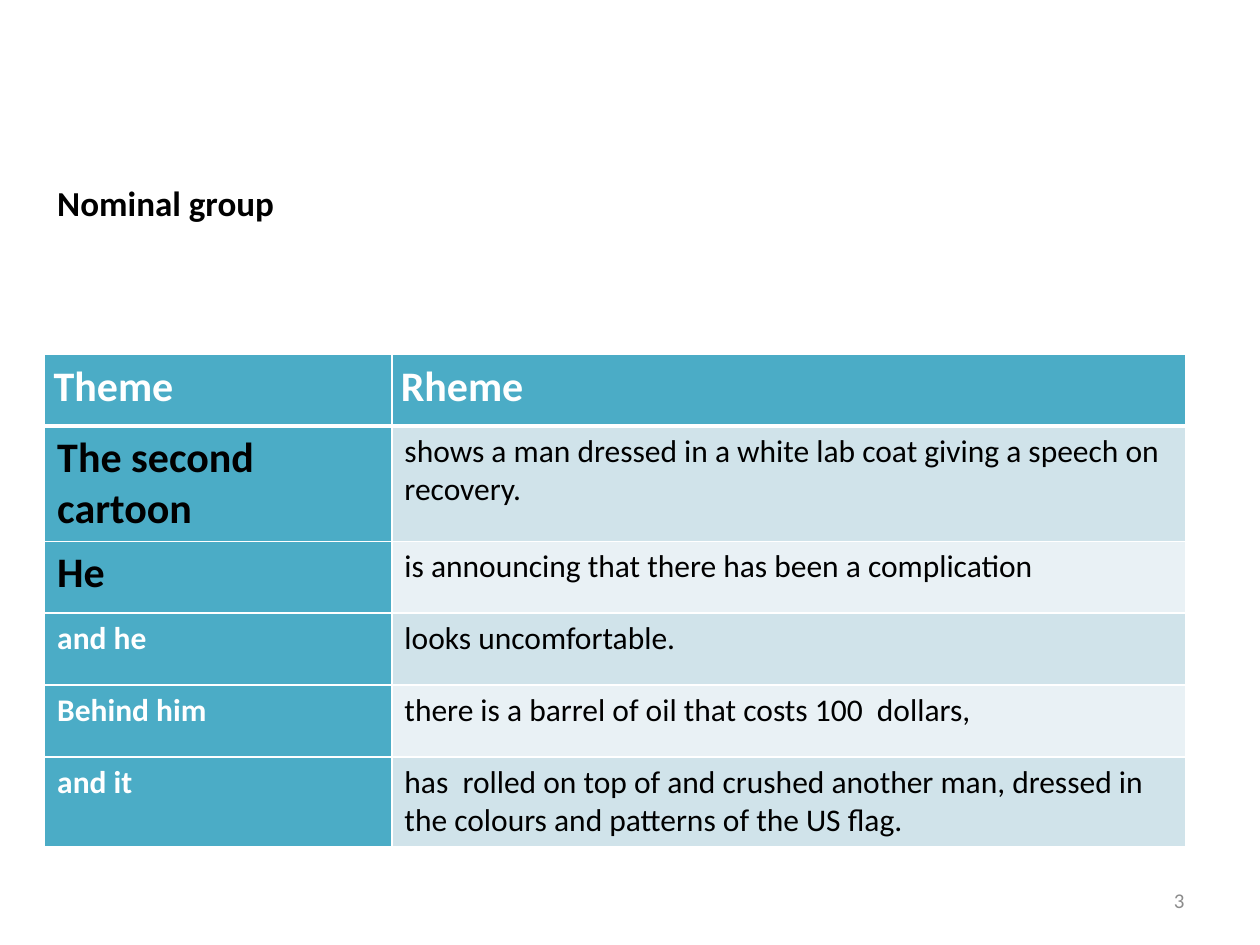
import pptx
import pptx.dml.color
import pptx.enum.text
import pptx.oxml
import pptx.util
from pptx.util import Cm

# Content
TITLE = "Nominal group"
PAGE_NUMBER = "3"
HEADER = ("Theme", "Rheme")
CLAUSES = [  # theme, rheme, whether the theme is a highlighted nominal group
    ("The second cartoon",
     "shows a man dressed in a white lab coat giving a speech on recovery.", True),
    ("He", "is announcing that there has been a complication", True),
    ("and he", "looks uncomfortable.", False),
    ("Behind him", "there is a barrel of oil that costs 100  dollars,", False),
    ("and it",
     "has  rolled on top of and crushed another man, dressed in the colours "
     "and patterns of the US flag.", False),
]

COLORS = {
    "accent": "4BACC6",
    "band_dark": "D0E3EA",
    "band_light": "E9F1F5",
    "white": "FFFFFF",
    "black": "000000",
    "grey": "8C8C8C",
}
FONT = "Calibri"
LEFT = Cm(0.9)
COLUMN_WIDTHS = (Cm(7.0), Cm(16.0))
ROW_HEIGHT = Cm(1.45)
ALIGN = pptx.enum.text.PP_ALIGN
ANCHOR = pptx.enum.text.MSO_ANCHOR


def rgb(name):
    return pptx.dml.color.RGBColor.from_string(COLORS[name])


def write(frame, text, size, color, bold=False, align=ALIGN.LEFT):
    frame.text = text
    para = frame.paragraphs[0]
    para.alignment = align
    for span in para.runs:
        span.font.name = FONT
        span.font.size = pptx.util.Pt(size)
        span.font.bold = bold
        span.font.color.rgb = rgb(color)
    return para


def add_borders(cell, bottom_points):
    properties = cell._tc.get_or_add_tcPr()
    sides = (("lnL", 1), ("lnR", 1), ("lnT", 1), ("lnB", bottom_points))
    for position, (side, points) in enumerate(sides):
        line = pptx.oxml.parse_xml(
            f'<a:{side} xmlns:a="http://schemas.openxmlformats.org/drawingml/2006/main" '
            f'w="{pptx.util.Pt(points)}"><a:solidFill><a:srgbClr val="{COLORS["white"]}"/>'
            f'</a:solidFill></a:{side}>')
        properties.insert(position, line)


def fill_cell(cell, color, bottom_points=1):
    cell.fill.solid()
    cell.fill.fore_color.rgb = rgb(color)
    add_borders(cell, bottom_points)


def add_title(page):
    title = page.shapes.title
    title.left, title.top, title.width, title.height = LEFT, Cm(3.53), Cm(5.2), Cm(1.11)
    frame = title.text_frame
    frame.vertical_anchor = ANCHOR.TOP
    frame.auto_size = pptx.enum.text.MSO_AUTO_SIZE.NONE
    write(frame, TITLE, 20, "black", bold=True)


def add_clause_table(page):
    row_count = len(CLAUSES) + 1
    table = page.shapes.add_table(row_count, len(HEADER), LEFT, Cm(7.14),
                                  sum(COLUMN_WIDTHS), ROW_HEIGHT * row_count).table
    table.first_col = True
    for column, width in zip(table.columns, COLUMN_WIDTHS):
        column.width = width
    for row in table.rows:
        row.height = ROW_HEIGHT

    # Header row
    for index, text in enumerate(HEADER):
        cell = table.cell(0, index)
        cell.margin_left = cell.margin_right = Cm(0.18)
        cell.margin_top = cell.margin_bottom = 0
        para = write(cell.text_frame, text, 24, "white", True, ALIGN.JUSTIFY)
        para.line_spacing = 1.15
        fill_cell(cell, "accent", bottom_points=3)

    # Clause rows
    for index, (theme, rheme, highlighted) in enumerate(CLAUSES, start=1):
        theme_cell, rheme_cell = table.cell(index, 0), table.cell(index, 1)
        size, color = (24, "black") if highlighted else (18, "white")
        write(theme_cell.text_frame, theme, size, color, bold=True)
        fill_cell(theme_cell, "accent")
        write(rheme_cell.text_frame, rheme, 18, "black")
        fill_cell(rheme_cell, "band_dark" if index % 2 else "band_light")


def add_page_number(page):
    box = page.shapes.add_textbox(Cm(18.2), Cm(17.65), Cm(5.93), Cm(1.01))
    box.text_frame.word_wrap = True
    box.text_frame.vertical_anchor = ANCHOR.MIDDLE
    write(box.text_frame, PAGE_NUMBER, 12, "grey", align=ALIGN.RIGHT)


def main():
    deck = pptx.Presentation()
    deck.slide_width, deck.slide_height = Cm(25.4), Cm(19.05)
    page = deck.slides.add_slide(deck.slide_layouts[5])
    add_title(page)
    add_clause_table(page)
    add_page_number(page)
    deck.save("out.pptx")


if __name__ == "__main__":
    main()
